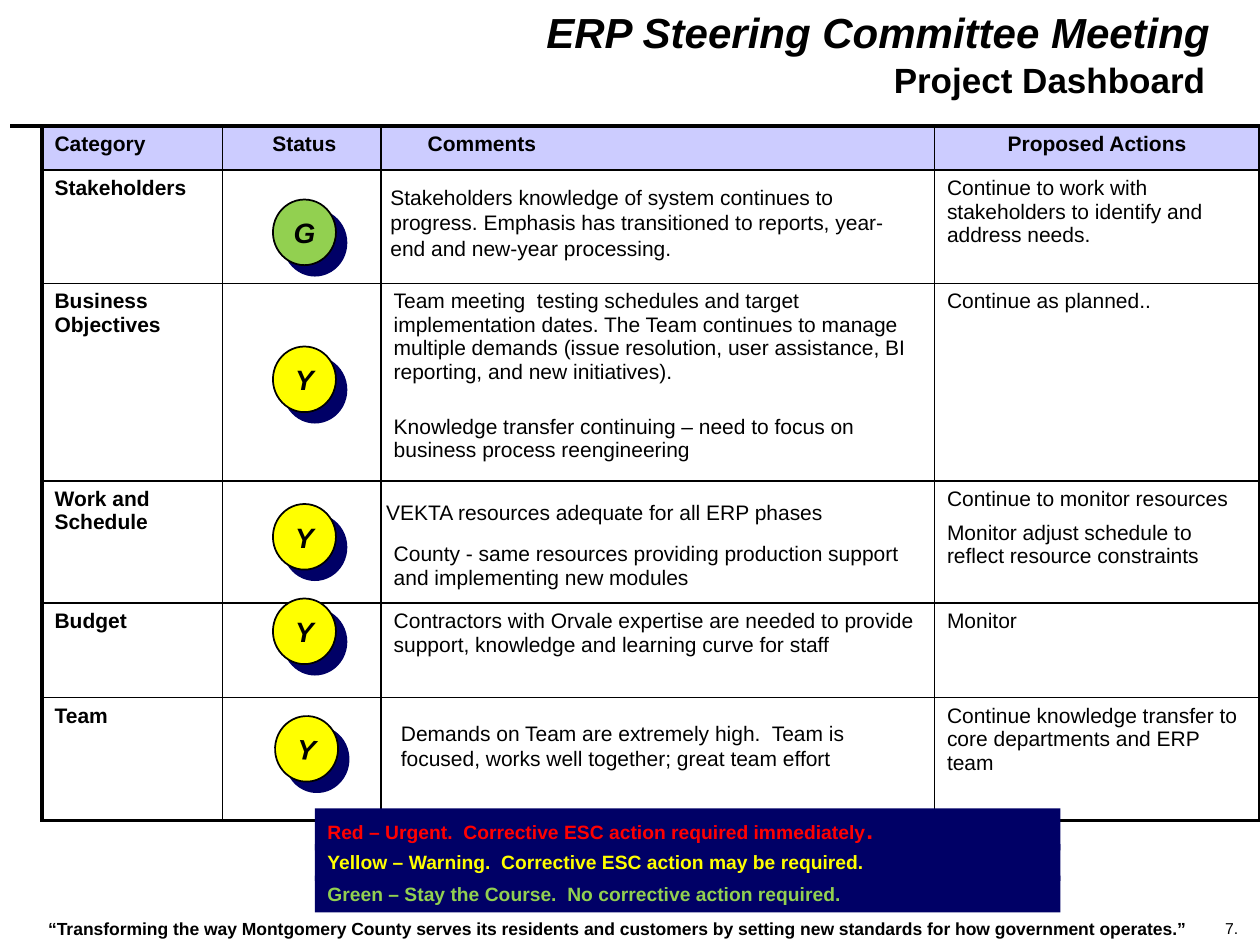
from lxml.etree import SubElement
from pptx import Presentation
from pptx.dml.color import RGBColor
from pptx.enum.shapes import MSO_CONNECTOR as Connector, MSO_SHAPE as Shape
from pptx.enum.text import MSO_ANCHOR as Anchor, PP_ALIGN as Align
from pptx.oxml import parse_xml
from pptx.oxml.ns import nsdecls, qn
from pptx.util import Inches, Pt

# The slide is a grid of 120 columns by 90 rows, each 1/12 inch
COLUMNS, ROWS, PER_INCH = 120, 90, 12
FONT = "Arial"
COLORS = {
    "ink": "000000", "header": "CCCCFF", "navy": "000066",
    "red": "FF0000", "yellow": "FFFF00", "green": "92D050",
}

COLUMN_WIDTHS = [17.2, 15.1, 52.7, 31]
ROW_HEIGHTS = [4.2, 10.8, 18.8, 11.65, 9, 11.7]
DASHBOARD = [
    ["Category", "Status", "Comments", "Proposed Actions"],
    ["Stakeholders", "", "",
     "Continue to work with stakeholders to identify and address needs."],
    ["Business Objectives", "",
     "Team meeting  testing schedules and target implementation dates. "
     "The Team continues to manage multiple demands (issue resolution, "
     "user assistance, BI reporting, and new initiatives).\n"
     "Knowledge transfer continuing – need to focus on business process "
     "reengineering",
     "Continue as planned.."],
    ["Work and Schedule", "",
     "County - same resources providing production support and "
     "implementing new modules",
     "Continue to monitor resources\n"
     "Monitor adjust schedule to reflect resource constraints"],
    ["Budget", "",
     "Contractors with Orvale expertise are needed to provide support, "
     "knowledge and learning curve for staff",
     "Monitor"],
    ["Team", "", "",
     "Continue knowledge transfer to core departments and ERP team"],
]
# Comments laid over the table: left, top, width, height, text
COMMENTS = [
    (36, 17, 52, 8.5,
     "Stakeholders knowledge of system continues to progress. Emphasis has "
     "transitioned to reports, year-end and new-year processing."),
    (35.6, 47, 52, 3.6, "VEKTA resources adequate for all ERP phases"),
    (37, 68, 51, 6,
     "Demands on Team are extremely high.  Team is focused, works well "
     "together; great team effort"),
]
# Status lights: left, top, letter, color, rotation
STATUSES = [
    (26.2, 68.2, "Y", "yellow", 3.7),
    (26, 19, "G", "green", 0),
    (26, 48, "Y", "yellow", 0),
    (26, 33, "Y", "yellow", 0),
    (26, 57, "Y", "yellow", 0),
]
# Legend bars: top, height, color, text
LEGEND = [
    (77, 4, "red", "Red – Urgent.  Corrective ESC action required immediately"),
    (83.4, 3.5, "green", "Green – Stay the Course.  No corrective action required."),
    (80.4, 3.5, "yellow", "Yellow – Warning.  Corrective ESC action may be required."),
]


def grid(*units):
    return [Inches(unit / PER_INCH) for unit in units]


def rgb(name):
    return RGBColor.from_string(COLORS[name])


def style(run, size, color="ink", bold=False, italic=False):
    run.font.name, run.font.size = FONT, Pt(size)
    run.font.bold, run.font.italic = bold, italic
    run.font.color.rgb = rgb(color)


def write(frame, text, size, align=Align.LEFT, gap=0, **look):
    """Fill a frame, with the gap in points between its paragraphs."""
    frame.word_wrap = True
    frame.text = text
    for index, paragraph in enumerate(frame.paragraphs):
        paragraph.alignment = align
        if index:
            paragraph.space_before = Pt(gap)
        for run in paragraph.runs:
            style(run, size, **look)


def add_label(slide, box, text, size, **look):
    label = slide.shapes.add_textbox(*grid(*box))
    write(label.text_frame, text, size, **look)
    return label


def add_header_rule(slide):
    rule = slide.shapes.add_connector(
        Connector.STRAIGHT, *grid(1, 12, COLUMNS - 1, 12))
    rule.line.color.rgb, rule.line.width = rgb("ink"), Pt(2)
    SubElement(rule._element.spPr, qn("a:effectLst"))


def add_borders(cell, row, column):
    """Heavy lines around the table, thin lines inside it."""
    outer = [column == 0, column == len(COLUMN_WIDTHS) - 1,
             row == 0, row == len(ROW_HEIGHTS) - 1]
    for index, (side, heavy) in enumerate(zip("LRTB", outer)):
        width = Pt(2.25 if heavy else 1)
        cell._tc.get_or_add_tcPr().insert(index, parse_xml(
            f'<a:ln{side} {nsdecls("a")} w="{width}"><a:solidFill>'
            f'<a:srgbClr val="{COLORS["ink"]}"/></a:solidFill></a:ln{side}>'))


def add_dashboard(slide):
    box = grid(4, 12, sum(COLUMN_WIDTHS), sum(ROW_HEIGHTS))
    table = slide.shapes.add_table(
        len(ROW_HEIGHTS), len(COLUMN_WIDTHS), *box).table
    for column, width in zip(table.columns, grid(*COLUMN_WIDTHS)):
        column.width = width
    for row, height in zip(table.rows, grid(*ROW_HEIGHTS)):
        row.height = height

    for row, entries in enumerate(DASHBOARD):
        for column, text in enumerate(entries):
            cell = table.cell(row, column)
            centered = row == 0 and column in (1, 3)
            write(cell.text_frame, text, 12,
                  align=Align.CENTER if centered else Align.LEFT,
                  gap=18 if column == 2 else 6,
                  bold=row == 0 or column == 0)
            if row == 0:
                cell.fill.solid()
                cell.fill.fore_color.rgb = rgb("header")
            else:
                cell.fill.background()
            add_borders(cell, row, column)

    # Header offsets, and room for the comment above the County line
    table.cell(0, 1).margin_left = Inches(0.14)
    table.cell(0, 2).margin_left = Inches(0.37)
    table.cell(3, 2).margin_top = Inches(0.49)


def add_legend_bar(slide, top, height, color, text):
    bar = slide.shapes.add_shape(Shape.RECTANGLE, *grid(30, top, 71, height))
    bar.shadow.inherit = False
    bar.fill.solid()
    bar.fill.fore_color.rgb = rgb("navy")
    bar.line.fill.background()
    bar.text_frame.vertical_anchor = Anchor.TOP
    write(bar.text_frame, text, 11, color=color, bold=True)
    return bar


def add_status(slide, left, top, letter, color, rotation):
    light = slide.shapes.add_shape(Shape.OVAL, *grid(left, top, 6, 6.25))
    light.rotation = rotation
    light.fill.solid()
    light.fill.fore_color.rgb = rgb(color)
    light.line.color.rgb, light.line.width = rgb("ink"), Pt(1)
    light.shadow.inherit = False
    effects = light._element.spPr.find(qn("a:effectLst"))
    shadow = SubElement(effects, qn("a:outerShdw"), dist=str(Pt(8.5)),
                        dir=str(45 * 60000), algn="ctr", rotWithShape="0")
    SubElement(shadow, qn("a:srgbClr"), val=COLORS["navy"])
    frame = light.text_frame
    frame.margin_left = frame.margin_right = 0
    frame.vertical_anchor = Anchor.MIDDLE
    write(frame, letter, 16, align=Align.CENTER, bold=True, italic=True)


def main():
    deck = Presentation()
    deck.slide_width, deck.slide_height = grid(COLUMNS, ROWS)
    slide = deck.slides.add_slide(deck.slide_layouts[6])

    # Heading and footer
    add_header_rule(slide)
    add_label(slide, (34, 0, 82.4, 6), "ERP Steering Committee Meeting", 24,
              align=Align.RIGHT, bold=True, italic=True)
    page = add_label(slide, (115.5, 86.9, 4.5, 3), "7.", 9)
    page.text_frame.word_wrap = False
    add_label(slide, (3.4, 86.8, 116, 3.2),
              "“Transforming the way Montgomery County serves its residents and "
              "customers by setting new standards for how government operates.”",
              10, bold=True)
    add_label(slide, (15, 5, 101, 5.2), "Project Dashboard", 20,
              align=Align.RIGHT, bold=True)

    # Dashboard table and legend
    add_dashboard(slide)
    bars = [add_legend_bar(slide, *entry) for entry in LEGEND]
    period = bars[0].text_frame.paragraphs[0].add_run()
    period.text = "."
    style(period, 14, color="red", bold=True)

    # Comments and status lights over the table
    for *box, text in COMMENTS:
        add_label(slide, box, text, 12)
    for status in STATUSES:
        add_status(slide, *status)

    deck.save("out.pptx")


if __name__ == "__main__":
    main()
